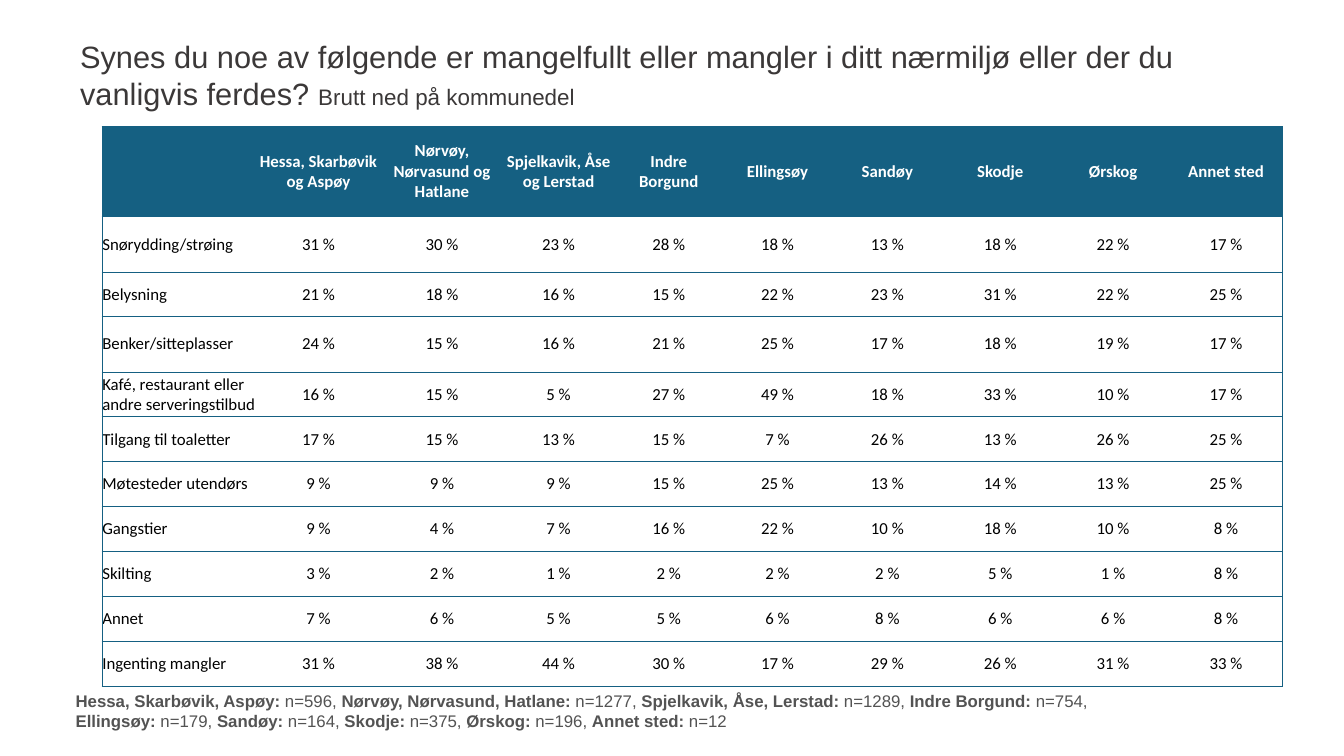
from lxml.etree import SubElement
from pptx import Presentation
from pptx.dml.color import RGBColor
from pptx.enum.text import MSO_ANCHOR as Anchor, PP_ALIGN as Align
from pptx.oxml.ns import qn
from pptx.util import Inches, Pt

COLORS = {
    "title": "3B3838",
    "note": "535353",
    "accent": "156082",
    "white": "FFFFFF",
    "black": "000000",
}
TITLE_FORMAT = {"name": "Arial", "size": Pt(44)}
SUBTITLE_FORMAT = {"name": "Arial", "size": Pt(32)}
NOTE_FORMAT = {"name": "Arial", "size": Pt(24)}
CELL_FORMAT = {"name": "Calibri", "size": Pt(24)}
BOX_FORMAT = {"word_wrap": True} | dict.fromkeys(
    ("margin_left", "margin_right", "margin_top", "margin_bottom"), Inches(0.06))
CELL_LAYOUT = {
    "vertical_anchor": Anchor.MIDDLE,
    "margin_left": Inches(0.01),
    "margin_right": Inches(0.01),
    "margin_top": Inches(0.01),
    "margin_bottom": 0,
}
NO_STYLE_NO_GRID = "{2D5ABB26-0587-4C30-8999-92F81FD0307C}"

TITLE = ("Synes du noe av følgende er mangelfullt eller mangler i ditt "
         "nærmiljø eller der du vanligvis ferdes? ")
SUBTITLE = "Brutt ned på kommunedel"

DISTRICTS = ["Hessa, Skarbøvik og Aspøy", "Nørvøy, Nørvasund og Hatlane",
             "Spjelkavik, Åse og Lerstad", "Indre\nBorgund", "Ellingsøy",
             "Sandøy", "Skodje", "Ørskog", "Annet sted"]
SHARES = {
    "Snørydding/strøing": [31, 30, 23, 28, 18, 13, 18, 22, 17],
    "Belysning": [21, 18, 16, 15, 22, 23, 31, 22, 25],
    "Benker/sitteplasser": [24, 15, 16, 21, 25, 17, 18, 19, 17],
    "Kafé, restaurant eller andre serveringstilbud":
        [16, 15, 5, 27, 49, 18, 33, 10, 17],
    "Tilgang til toaletter": [17, 15, 13, 15, 7, 26, 13, 26, 25],
    "Møtesteder utendørs": [9, 9, 9, 15, 25, 13, 14, 13, 25],
    "Gangstier": [9, 4, 7, 16, 22, 10, 18, 10, 8],
    "Skilting": [3, 2, 1, 2, 2, 2, 5, 1, 8],
    "Annet": [7, 6, 5, 5, 6, 8, 6, 6, 8],
    "Ingenting mangler": [31, 38, 44, 30, 17, 29, 26, 31, 33],
}
COLUMN_WIDTHS = [3.08, 2.44, 2.46, 2.17, 2.2, 2.12] + [2.24] * 4
ROW_HEIGHTS = [1.78, 1.11, 0.87, 1.11] + [0.89] * 7

SAMPLE_LINES = [
    [("Hessa, Skarbøvik, Aspøy", 596), ("Nørvøy, Nørvasund, Hatlane", 1277),
     ("Spjelkavik, Åse, Lerstad", 1289), ("Indre Borgund", 754)],
    [("Ellingsøy", 179), ("Sandøy", 164), ("Skodje", 375), ("Ørskog", 196),
     ("Annet sted", 12)],
]


def apply(target, values):
    for name, value in values.items():
        setattr(target, name, value)


def add_span(para, text, font_format, color, bold=False):
    span = para.add_run()
    span.text = text
    apply(span.font, font_format | {"bold": bold})
    span.font.color.rgb = RGBColor.from_string(COLORS[color])


def add_text_frame(page, box, anchor):
    frame = page.shapes.add_textbox(*map(Inches, box)).text_frame
    apply(frame, BOX_FORMAT | {"vertical_anchor": anchor})
    return frame


def add_title(page, box):
    para = add_text_frame(page, box, Anchor.MIDDLE).paragraphs[0]
    add_span(para, TITLE, TITLE_FORMAT, "title")
    add_span(para, SUBTITLE, SUBTITLE_FORMAT, "title")


def add_sample_note(page, box):
    frame = add_text_frame(page, box, Anchor.TOP)
    for row, samples in enumerate(SAMPLE_LINES):
        para = frame.add_paragraph() if row else frame.paragraphs[0]
        for index, (district, count) in enumerate(samples):
            is_last = index == len(samples) - 1
            ending = "" if is_last and row else "," if is_last else ", "
            add_span(para, f"{district}:", NOTE_FORMAT, "note", bold=True)
            add_span(para, f" n={count}{ending}", NOTE_FORMAT, "note")


def set_borders(cell, visible):
    """Draw the named sides (L, R, T, B) in the accent colour; hide the rest."""
    properties = cell._tc.get_or_add_tcPr()
    for side in "LRTB":
        line = SubElement(properties, qn(f"a:ln{side}"), w=str(Pt(1)))
        if side in visible:
            fill = SubElement(line, qn("a:solidFill"))
            SubElement(fill, qn("a:srgbClr"), val=COLORS["accent"])
        else:
            SubElement(line, qn("a:noFill"))


def fill_cell(cell, text, is_header, is_label, is_last):
    apply(cell, CELL_LAYOUT)
    set_borders(cell, "TB" + "L" * is_label + "R" * is_last)
    cell.fill.solid()
    cell.fill.fore_color.rgb = RGBColor.from_string(
        COLORS["accent" if is_header else "white"])
    frame = cell.text_frame
    for index, line in enumerate(text.split("\n")):
        para = frame.add_paragraph() if index else frame.paragraphs[0]
        para.alignment = Align.LEFT if is_label else Align.CENTER
        if line:
            add_span(para, line, CELL_FORMAT,
                     "white" if is_header else "black", bold=is_header)


def add_share_table(page, box):
    rows = [["", *DISTRICTS]]
    rows += [[label, *(f"{share} %" for share in shares)]
             for label, shares in SHARES.items()]
    table = page.shapes.add_table(
        len(rows), len(COLUMN_WIDTHS), *map(Inches, box)).table
    apply(table, {"first_row": False, "horz_banding": False})
    table._tbl.tblPr.find(qn("a:tableStyleId")).text = NO_STYLE_NO_GRID
    for column, width in zip(table.columns, COLUMN_WIDTHS):
        column.width = Inches(width)
    for row, height in zip(table.rows, ROW_HEIGHTS):
        row.height = Inches(height)
    for r, texts in enumerate(rows):
        for c, text in enumerate(texts):
            fill_cell(table.cell(r, c), text, is_header=r == 0,
                      is_label=c == 0, is_last=c == len(texts) - 1)


def main():
    deck = Presentation()
    apply(deck, {"slide_width": Inches(26.67), "slide_height": Inches(15)})
    page = deck.slides.add_slide(deck.slide_layouts[6])
    add_title(page, (1.53, 0.47, 23.66, 2.04))
    add_share_table(page, (2.02, 2.51, 23.42, 11.13))
    add_sample_note(page, (1.44, 13.65, 23.66, 0.93))
    deck.save("out.pptx")


if __name__ == "__main__":
    main()
